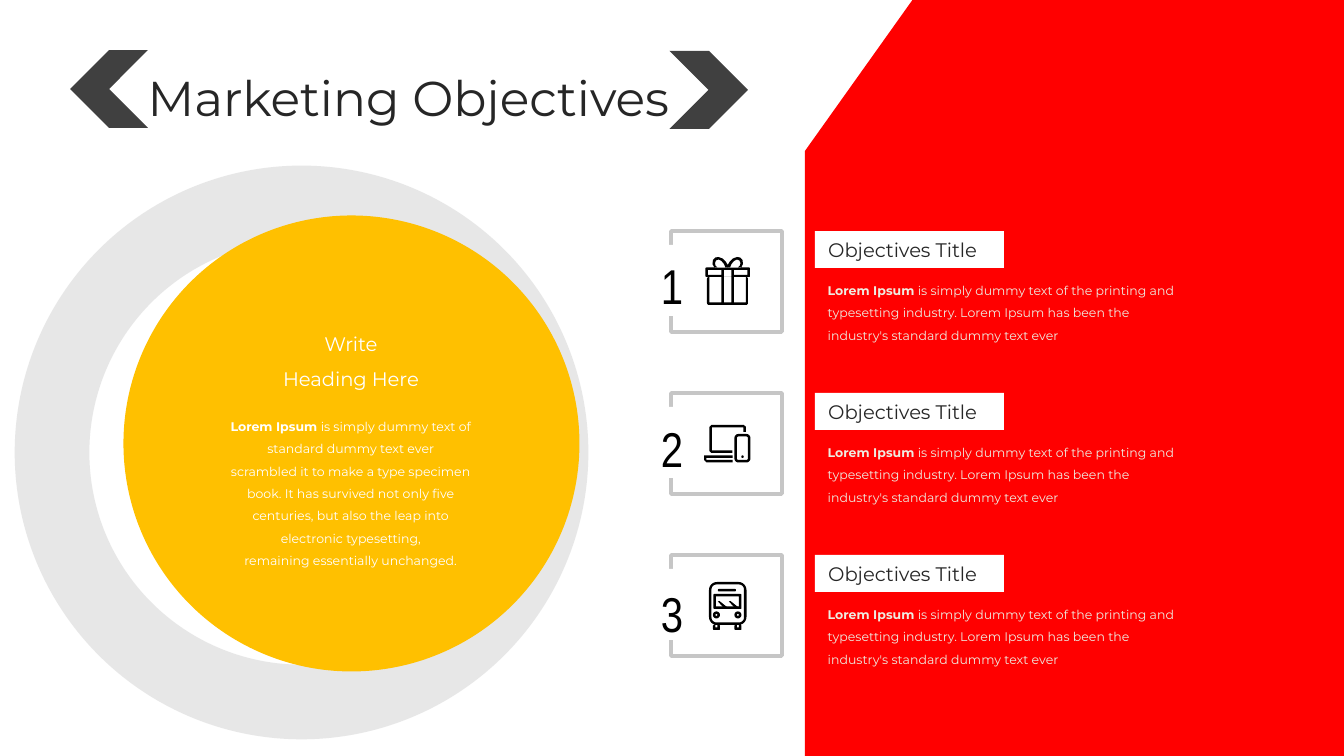
"""Build the Marketing Objectives slide."""
import math
import pptx
import pptx.util
import pptx.dml.color
import pptx.enum.shapes
import pptx.enum.text
import pptx.oxml.ns
import lxml.etree

KIND = pptx.enum.shapes.MSO_SHAPE
ALIGN = pptx.enum.text.PP_ALIGN
MID = pptx.enum.text.MSO_ANCHOR.MIDDLE
TOP = pptx.enum.text.MSO_ANCHOR.TOP
SCALE = 914400 / 134.4
FONT = "Montserrat"
DARK, WHITE, CREAM, BLACK = "262626", "FFFFFF", "EEECE1", "000000"

TITLE = "Marketing Objectives"
HEAD = [[("Write", False)], [("Heading Here", False)]]
STORY = [
    [("Lorem Ipsum", True), (" is simply dummy text of standard dummy text ever", False)],
    [("scrambled it to make a type specimen book. It has survived not only five", False)],
    [("centuries, but also the leap into electronic typesetting,", False)],
    [("remaining essentially unchanged.", False)],
]
LABEL = "Objectives Title"
BODY = [[
    ("Lorem Ipsum", True),
    (" is simply dummy text of the printing and typesetting industry. "
     "Lorem Ipsum has been the industry's standard dummy text ever", False),
]]

PANEL = [(805, 151), (912.5, 0), (1344, 0), (1344, 756), (805, 756)]
LOOP = [(44, 37), (42, 33), (42.5, 29), (45, 26.5), (48, 26), (52, 27.5),
        (55.5, 31), (57.25, 34), (57.25, 37)]
HOLE = [(47, 36.5), (45, 34.5), (44.5, 32), (45.5, 29.5), (48, 28.5),
        (51, 30), (53.5, 33), (55, 36.5)]
SCREEN = [(41, 32), (73.5, 32), (75.5, 34), (75.5, 39), (73, 39), (73, 34.5),
          (41.5, 34.5), (41.5, 57.5), (62, 57.5), (62, 60), (41, 60), (39, 58), (39, 34)]
BASE = [(33.5, 62.5), (62, 62.5), (62, 65), (36, 65), (36, 67), (62, 67),
        (62, 69.5), (36, 69.5), (33.5, 67)]


def ring(left, top, wide, high, rad=0):
    """Return the outline of a box with round corners."""
    if not rad:
        return [(left, top), (left + wide, top),
                (left + wide, top + high), (left, top + high)]
    spots = [(left + wide - rad, top + high - rad), (left + rad, top + high - rad),
             (left + rad, top + rad), (left + wide - rad, top + rad)]
    return [(x + rad * math.cos(math.radians(90 * i + a)),
             y + rad * math.sin(math.radians(90 * i + a)))
            for i, (x, y) in enumerate(spots) for a in range(0, 91, 15)]


def flip(line):
    """Mirror an outline across the middle of the gift."""
    return [(114.5 - x, y) for x, y in line]


GIFT = [[
    LOOP, HOLE, flip(LOOP), flip(HOLE),
    ring(35, 36.5, 44.5, 9.5, 1), ring(36.5, 46, 41, 28, 2),
    ring(37.5, 39, 13.5, 5), ring(63.5, 39, 13.5, 5), ring(53.5, 39, 7.5, 32.5),
    ring(39, 46, 12, 25.5), ring(63.5, 46, 12, 25.5),
]]
SCREENS = [
    [SCREEN], [BASE],
    [ring(64, 41, 16, 28.5, 4), ring(66.5, 43.5, 11, 23.5, 1.5)],
    [ring(70.75, 62.5, 2.5, 2.5, 1.25)],
]
BUS = [
    [ring(38.5, 27, 37.5, 43, 8), ring(41, 29.5, 32.5, 38, 5)]
    + [ring(x, 70, 7, 5, 1) for x in (42.5, 64)]
    + [ring(x + 2.5, 70, 2, 2.5) for x in (42.5, 64)],
    [ring(47.5, 34, 18, 2.5, 1)],
    [ring(43, 39, 28, 15, 1), ring(45.5, 41.5, 23, 10)],
] + [
    [[(x, 46.5), (x + 1.5, 46), (x + 9, 52), (x + 5, 52)]] for x in (47.5, 58.5)
] + [
    [ring(x, 56.5, 7, 7, 3.5), ring(x + 2.5, 59, 2, 2, 1)] for x in (42.5, 64)
]
ROWS = [("1", 249, GIFT), ("2", 412, SCREENS), ("3", 577, BUS)]

deck = pptx.Presentation()
deck.slide_width, deck.slide_height = round(1344 * SCALE), round(756 * SCALE)
slide = deck.slides.add_slide(deck.slide_layouts[6])


def tint(code):
    """Turn a hex string into a colour."""
    return pptx.dml.color.RGBColor.from_string(code)


def paint(shape, fill=None, line=None):
    """Set fill and line, the line as colour, points and opacity."""
    shape.shadow.inherit = False
    if fill:
        shape.fill.solid()
        shape.fill.fore_color.rgb = tint(fill)
    else:
        shape.fill.background()
    if not line:
        shape.line.fill.background()
        return shape
    code, width, clear = line
    shape.line.color.rgb = tint(code)
    shape.line.width = pptx.util.Pt(width)
    qn = pptx.oxml.ns.qn
    for node in shape.element.iter(qn("a:srgbClr")):
        lxml.etree.SubElement(node, qn("a:alpha")).set("val", str(clear * 1000))
    return shape


def place(kind, box, fill=None, line=None):
    """Add a preset shape."""
    return paint(slide.shapes.add_shape(kind, *[round(v * SCALE) for v in box]), fill, line)


def draw(lines, fill, left=0, top=0):
    """Add one freeform made of closed outlines."""
    paths = [[(round((x + left) * SCALE), round((y + top) * SCALE)) for x, y in line]
             for line in lines]
    pen = slide.shapes.build_freeform(*paths[0][0], scale=1.0)
    for i, path in enumerate(paths):
        if i:
            pen.move_to(*path[0])
        pen.add_line_segments(path[1:], close=True)
    paint(pen.convert_to_shape(), fill)


def fill_text(shape, paras, size, code, font=FONT, align=ALIGN.CENTER, space=None):
    """Write paragraphs run by run."""
    frame = shape.text_frame
    frame.word_wrap = True
    for i, runs in enumerate(paras):
        para = frame.add_paragraph() if i else frame.paragraphs[0]
        para.alignment = align
        if space:
            para.line_spacing = pptx.util.Pt(space)
        for words, bold in runs:
            run = para.add_run()
            run.text = words
            run.font.name, run.font.size = font, pptx.util.Pt(size)
            run.font.bold = bold
            run.font.color.rgb = tint(code)


def write(box, *args, **opts):
    """Add a text box."""
    shape = slide.shapes.add_textbox(*[round(v * SCALE) for v in box])
    shape.text_frame.vertical_anchor = TOP
    fill_text(shape, *args, **opts)


draw([PANEL], "FF0000")
place(KIND.OVAL, (52, 203, 499, 499), line=("BFBFBF", 40, 37))
write((69, 61, 679, 73), [[(TITLE, False)]], 26.2, DARK)

for i, (digit, high, icon) in enumerate(ROWS):
    top = 231 + 162 * i
    place(KIND.RECTANGLE, (671, top, 111, 101), line=(DARK, 2, 25))
    for part in icon:
        draw(part, BLACK, 670.5, top)
    write((814.5, top + 38, 377, 79), BODY, 6.7, CREAM, align=ALIGN.LEFT, space=12)
    label = place(KIND.RECTANGLE, (815, top, 189, 37), WHITE)
    label.text_frame.vertical_anchor = MID
    fill_text(label, [[(LABEL, False)]], 10.5, DARK, align=ALIGN.LEFT)
    place(KIND.RECTANGLE, (652, top + 14, 43, 71), WHITE)
    write((613, high, 118, 73), [[(digit, False)]], 26.2, BLACK, font="Arial Narrow")

place(KIND.OVAL, (123.5, 215.5, 456, 456), "FFC000")
write((237, 314, 228, 81), HEAD, 10.5, WHITE, space=18.8)
write((215, 405, 272, 169), STORY, 6.7, WHITE, space=12)
place(KIND.CHEVRON, (669.5, 51, 78.5, 78), "404040")
place(KIND.CHEVRON, (70, 50, 78, 78), "404040").rotation = 180

deck.save("out.pptx")
